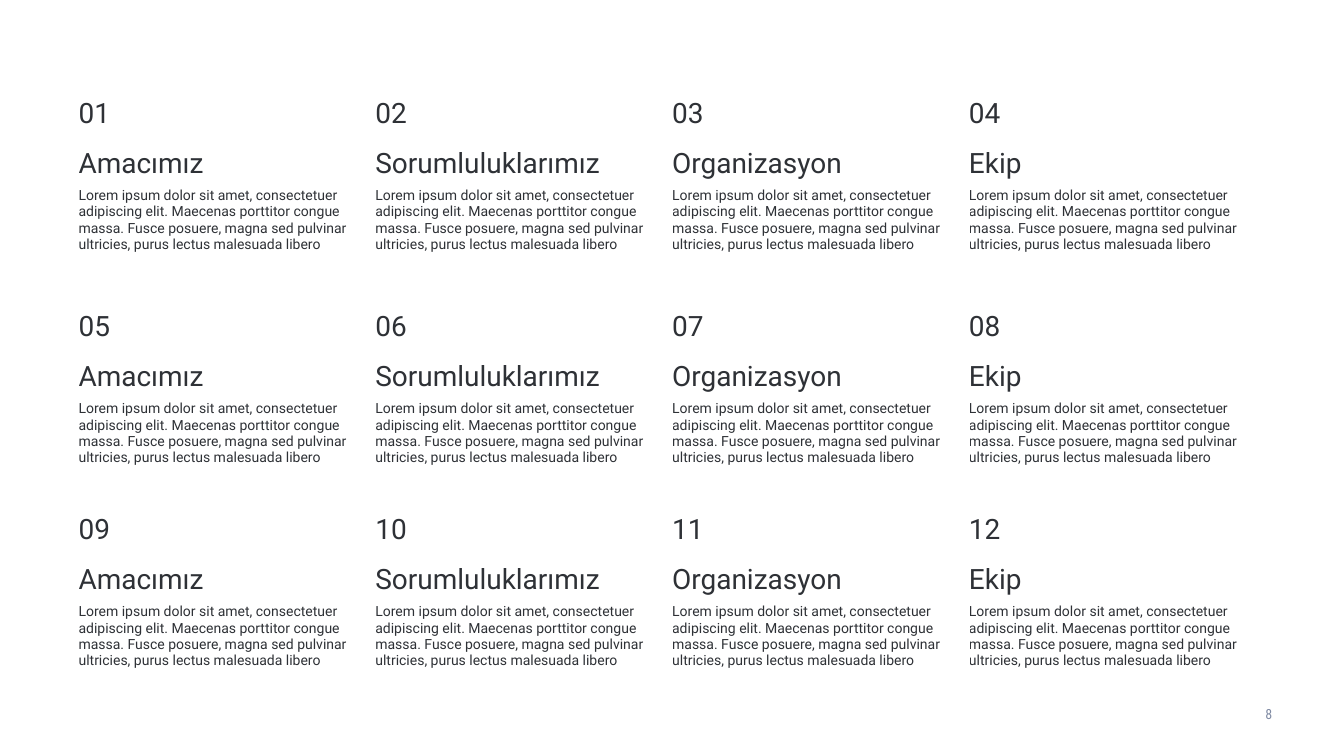
from lxml.etree import SubElement
from pptx import Presentation
from pptx.dml.color import RGBColor
from pptx.enum.text import MSO_ANCHOR
from pptx.oxml.ns import qn
from pptx.util import Pt

INK = "2E3136"
NAVY = "001749"
TOPICS = ["Amacımız", "Sorumluluklarımız", "Organizasyon", "Ekip"]
SUMMARY = (
    "Lorem ipsum dolor sit amet, consectetuer adipiscing elit. "
    "Maecenas porttitor congue massa. Fusce posuere, magna sed pulvinar "
    "ultricies, purus lectus malesuada libero"
)
BAND_HEIGHTS = [70.6, 35.3, 85]
GAP_HEIGHTS = [36.7, 25.9]
BANDS = 3
COLUMN_WIDTH = 318


def color(hex_value):
    """Turn a hex string into a colour."""
    return RGBColor.from_string(hex_value)


def add_run(paragraph, text, size, font, hex_value):
    """Append a styled run to a paragraph."""
    run = paragraph.add_run()
    run.text = text
    run.font.size = Pt(size)
    run.font.name = font
    run.font.color.rgb = color(hex_value)
    return run


def clear_cell(cell):
    """Give a cell no fill, middle anchoring and only a right margin."""
    cell.fill.background()
    cell.vertical_anchor = MSO_ANCHOR.MIDDLE
    cell.margin_left = cell.margin_top = cell.margin_bottom = 0
    cell.margin_right = Pt(28)


def fill_band(topics, band):
    """Write the number, topic and summary rows of one band."""
    top_row = band * (len(BAND_HEIGHTS) + 1)
    for column, topic in enumerate(TOPICS):
        number = f"{band * len(TOPICS) + column + 1:02d}"
        entries = [(number, 30), (topic, 30), (SUMMARY, 15)]
        for offset, (text, size) in enumerate(entries):
            cell = topics.cell(top_row + offset, column)
            add_run(cell.text_frame.paragraphs[0], text, size, "Roboto", INK)


def add_topics(slide):
    """Add the table of numbered topics."""
    heights = list(BAND_HEIGHTS)
    for gap in GAP_HEIGHTS:
        heights += [gap, *BAND_HEIGHTS]
    topics = slide.shapes.add_table(
        len(heights), len(TOPICS), Pt(84.2), Pt(87.1),
        Pt(COLUMN_WIDTH * len(TOPICS)), Pt(sum(heights)),
    ).table
    topics.first_row = False
    topics.horz_banding = False
    for column in topics.columns:
        column.width = Pt(COLUMN_WIDTH)
    for row, height in zip(topics.rows, heights):
        row.height = Pt(height)
    for cell in topics.iter_cells():
        clear_cell(cell)
    for band in range(BANDS):
        fill_band(topics, band)


def add_page_number(slide, number):
    """Add the half-transparent page number."""
    frame = slide.shapes.add_textbox(Pt(1355.8), Pt(750.2), Pt(67), Pt(28.8)).text_frame
    frame.word_wrap = True
    frame.vertical_anchor = MSO_ANCHOR.MIDDLE
    frame.margin_left = frame.margin_right = 0
    frame.margin_top = frame.margin_bottom = 0
    run = add_run(frame.paragraphs[0], number, 15, "Roboto Condensed", NAVY)
    tint = run.font._element.find(".//" + qn("a:srgbClr"))
    SubElement(tint, qn("a:alpha"), val="50000")


def main():
    """Build and save the slide."""
    deck = Presentation()
    deck.slide_width, deck.slide_height = Pt(1440), Pt(810)
    slide = deck.slides.add_slide(deck.slide_layouts[6])
    add_page_number(slide, "8")
    add_topics(slide)
    deck.save("out.pptx")


if __name__ == "__main__":
    main()
